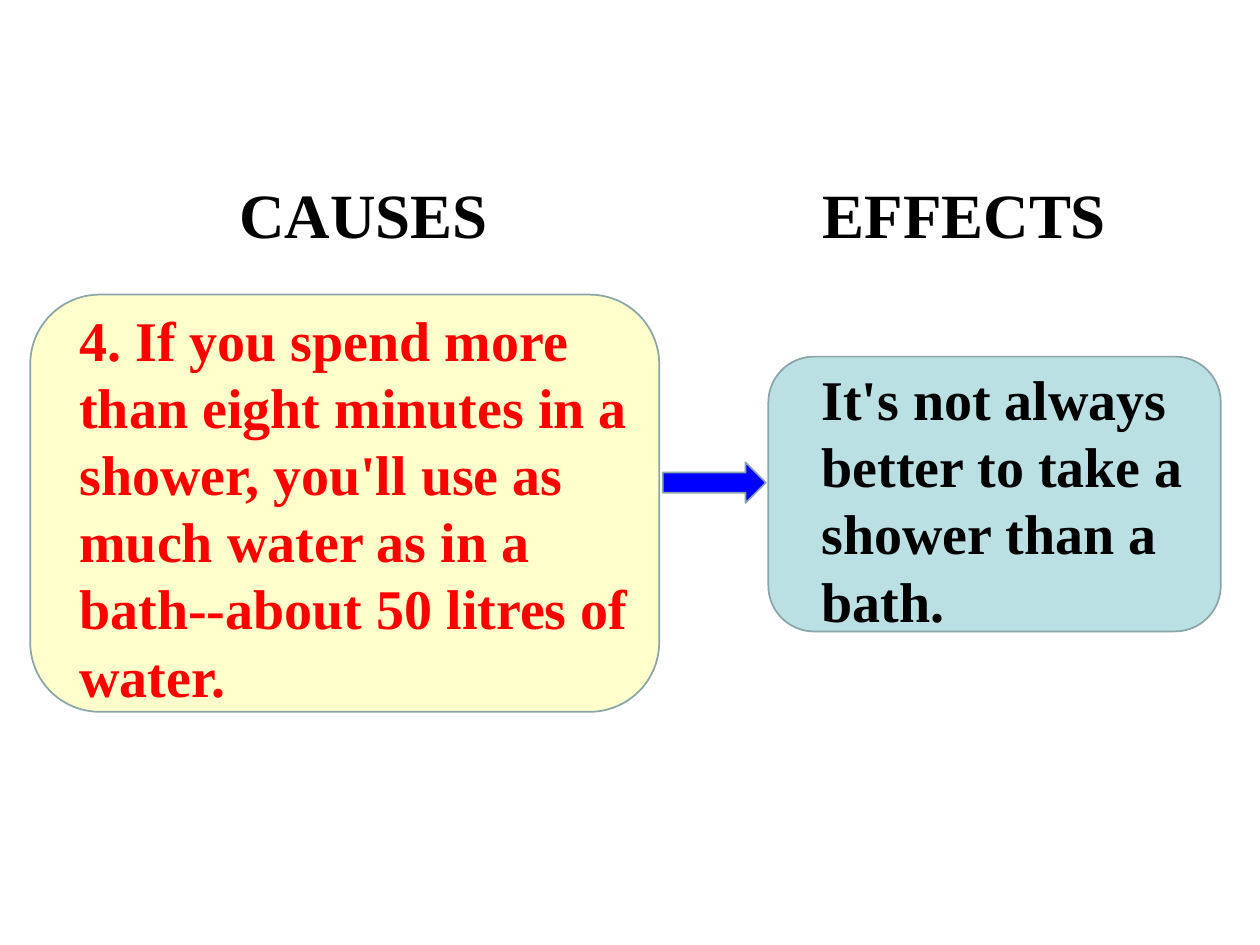
import pptx
import pptx.dml.color
import pptx.enum.shapes
import pptx.enum.text
import pptx.util

Cm, Pt = pptx.util.Cm, pptx.util.Pt
RGB = pptx.dml.color.RGBColor
SHAPE = pptx.enum.shapes.MSO_SHAPE
ALIGN = pptx.enum.text.PP_ALIGN

COLORS = {
    "cause": "FFFFCC", "effect": "BBE0E3", "arrow": "0000FF",
    "outline": "8AA6A8", "red": "FF0000", "black": "000000",
}
FONT = "Times New Roman"
LINE_RATIO = 1.2  # line height relative to font size

# Content: (preset, fill, left, top, width, height) in cm
SHAPES = [
    (SHAPE.ROUNDED_RECTANGLE, "cause", 0.61, 5.94, 12.68, 8.41),
    (SHAPE.ROUNDED_RECTANGLE, "effect", 15.49, 7.19, 9.12, 5.54),
    (SHAPE.RIGHT_ARROW, "arrow", 13.36, 9.32, 2.08, 0.82),
]
# Content: (text, colour, size, alignment, wrap, left, top, width, height)
TEXTS = [
    ("CAUSES", "black", 36, ALIGN.CENTER, False, 4.55, 3.33, 5.56, 1.8),
    ("EFFECTS", "black", 36, ALIGN.CENTER, False, 16.31, 3.33, 6.27, 1.8),
    ("4. If you spend more than eight minutes in a shower, you'll use as "
     "much water as in a bath--about 50 litres of water.",
     "red", 32, ALIGN.LEFT, True, 1.35, 5.94, 11.96, 8.46),
    ("It's not always better to take a shower than a bath.",
     "black", 32, ALIGN.LEFT, True, 16.31, 7.14, 8.38, 5.74),
]


def rgb(name):
    return RGB.from_string(COLORS[name])


def add_block(s, preset, fill, *box):
    sp = s.shapes.add_shape(preset, *map(Cm, box))
    sp.shadow.inherit = False
    sp.fill.solid()
    sp.fill.fore_color.rgb = rgb(fill)
    sp.line.color.rgb = rgb("outline")
    sp.line.width = Pt(1)


def add_text(s, text, color, size, align, wrap, *box):
    tf = s.shapes.add_textbox(*map(Cm, box)).text_frame
    tf.word_wrap = wrap
    tf.margin_top = Cm(0.21)
    p = tf.paragraphs[0]
    p.text = text
    p.alignment = align
    p.line_spacing = Pt(size * LINE_RATIO)
    p.font.name = FONT
    p.font.size = Pt(size)
    p.font.bold = True
    p.font.color.rgb = rgb(color)


def main():
    prs = pptx.Presentation()
    prs.slide_width, prs.slide_height = Cm(25.4), Cm(19.05)
    s = prs.slides.add_slide(prs.slide_layouts[6])
    # Cause and effect boxes with the arrow between them
    for block in SHAPES:
        add_block(s, *block)
    # Headings and statements
    for text in TEXTS:
        add_text(s, *text)
    prs.save("out.pptx")


if __name__ == "__main__":
    main()
